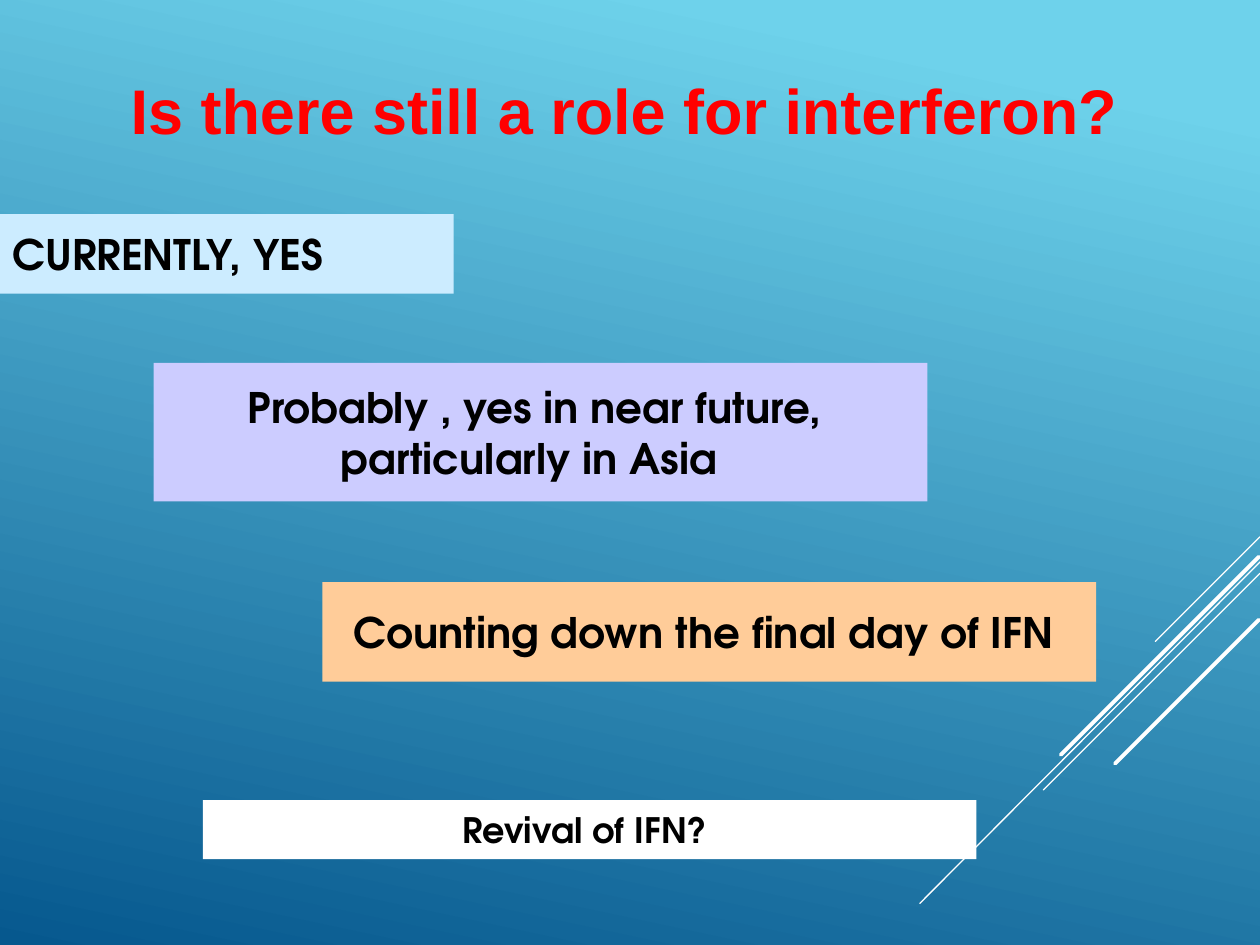
from dataclasses import dataclass

import pptx
import pptx.dml.color
import pptx.enum.shapes
import pptx.enum.text
import pptx.oxml
import pptx.util
from pptx.util import Inches

ALIGN = pptx.enum.text.PP_ALIGN
ANCHOR = pptx.enum.text.MSO_ANCHOR


@dataclass(frozen=True)
class Theme:
    heading_font: str = "Arial"
    answer_font: str = "TeX Gyre Adventor"
    heading_size: int = 36
    answer_size: int = 24
    small_size: int = 20
    sky: str = "6ED2EB"
    deep: str = "06588E"
    red: str = "FF0000"
    black: str = "000000"
    white: str = "FFFFFF"
    pale_blue: str = "CCECFF"
    lilac: str = "CCCCFF"
    peach: str = "FFCC99"


THEME = Theme()

# Diagonal streaks: start x, start y, end x, end y, width in points
STREAKS = [
    (10, 4.26, 9.17, 5.09, 0.75),
    (10, 4.46, 7.3, 7.17, 0.75),
    (10, 4.55, 8.28, 6.27, 0.75),
    (9.99, 4.42, 8.42, 5.99, 2.25),
    (9.99, 4.92, 8.85, 6.06, 2.25),
]

# Later answers: left, top, height, fill, type size, lines
ANSWER_WIDTH = 6.14
ANSWERS = [
    (1.22, 2.88, 1.1, THEME.lilac, THEME.answer_size,
     ["Probably , yes in near future, ", "particularly in Asia  "]),
    (2.56, 4.62, 0.79, THEME.peach, THEME.answer_size,
     ["Counting down the final day of IFN "]),
    (1.61, 6.35, 0.47, THEME.white, THEME.small_size, ["Revival of IFN? "]),
]


def rgb(value):
    return pptx.dml.color.RGBColor.from_string(value)


def place(shape, left, top, width, height):
    shape.left, shape.top = Inches(left), Inches(top)
    shape.width, shape.height = Inches(width), Inches(height)


def fill_solid(shape, color):
    shape.fill.solid()
    shape.fill.fore_color.rgb = rgb(color)


def write(shape, lines, size, font, color, align, anchor):
    frame = shape.text_frame
    frame.word_wrap = True
    frame.auto_size = pptx.enum.text.MSO_AUTO_SIZE.NONE
    frame.vertical_anchor = anchor
    for index, line in enumerate(lines):
        paragraph = frame.add_paragraph() if index else frame.paragraphs[0]
        paragraph.alignment = align
        run = paragraph.add_run()
        run.text = line
        run.font.size = pptx.util.Pt(size)
        run.font.name = font
        run.font.bold = True
        run.font.color.rgb = rgb(color)


def paint_background(slide):
    fill = slide.background.fill
    fill.gradient()
    fill.gradient_angle = 360 - 102  # measured counter-clockwise
    stops = [(0.1, THEME.sky), (1, THEME.deep)]
    for stop, (position, color) in zip(fill.gradient_stops, stops):
        stop.position = position
        stop.color.rgb = rgb(color)


def add_streak(slide, x1, y1, x2, y2, width):
    streak = slide.shapes.add_connector(
        pptx.enum.shapes.MSO_CONNECTOR.STRAIGHT,
        Inches(x1), Inches(y1), Inches(x2), Inches(y2))
    streak.line.color.rgb = rgb(THEME.white)
    streak.line.width = pptx.util.Pt(width)
    streak.line._get_or_add_ln().set("cap", "rnd")
    properties = streak._element.spPr
    properties.append(pptx.oxml.parse_xml(
        '<a:effectLst xmlns:a='
        '"http://schemas.openxmlformats.org/drawingml/2006/main"/>'))


def add_current_answer(slide):
    current = slide.shapes.title
    place(current, 0, 1.7, 3.6, 0.63)
    fill_solid(current, THEME.pale_blue)
    write(current, ["CURRENTLY, YES"], THEME.answer_size, THEME.answer_font,
          THEME.black, ALIGN.LEFT, ANCHOR.MIDDLE)


def add_question(slide):
    question = slide.shapes.add_textbox(
        Inches(0.27), Inches(0.52), Inches(9.37), Inches(0.71))
    write(question, ["Is there still a role for interferon?"],
          THEME.heading_size, THEME.heading_font, THEME.red,
          ALIGN.CENTER, ANCHOR.TOP)


def add_answer(slide, left, top, height, color, size, lines):
    answer = slide.shapes.add_shape(
        pptx.enum.shapes.MSO_SHAPE.RECTANGLE, Inches(left), Inches(top),
        Inches(ANSWER_WIDTH), Inches(height))
    answer.shadow.inherit = False
    answer.line.fill.background()
    fill_solid(answer, color)
    write(answer, lines, size, THEME.answer_font, THEME.black,
          ALIGN.CENTER, ANCHOR.MIDDLE)


def main():
    deck = pptx.Presentation()
    deck.slide_width, deck.slide_height = Inches(10), Inches(7.5)
    slide = deck.slides.add_slide(deck.slide_layouts[5])

    # Backdrop
    paint_background(slide)
    for streak in STREAKS:
        add_streak(slide, *streak)

    # Question and its answers over time
    add_current_answer(slide)
    add_question(slide)
    for answer in ANSWERS:
        add_answer(slide, *answer)

    deck.save("out.pptx")


if __name__ == "__main__":
    main()
